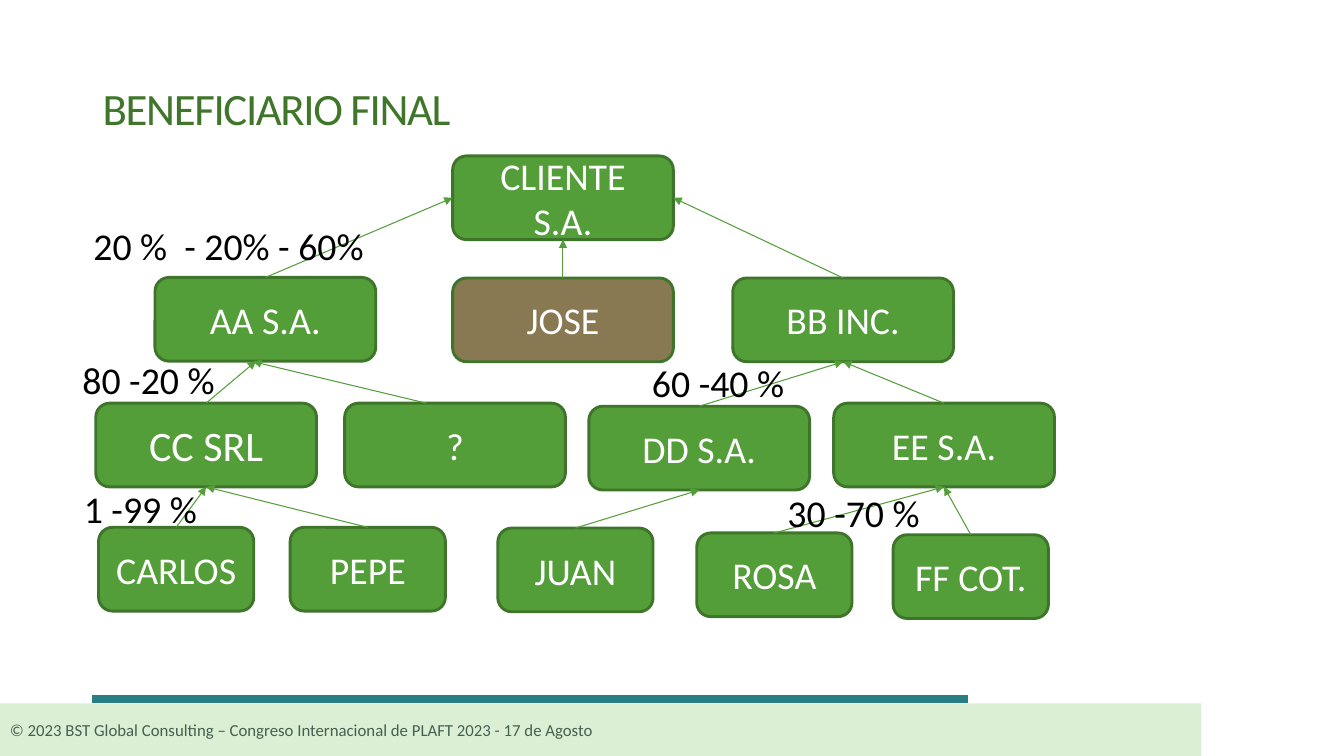
from lxml.etree import SubElement
from pptx import Presentation
from pptx.dml.color import RGBColor
from pptx.enum.shapes import MSO_CONNECTOR as Connector, MSO_SHAPE as Shape
from pptx.enum.text import MSO_ANCHOR as Anchor, PP_ALIGN as Align
from pptx.oxml.ns import qn
from pptx.util import Pt

GREEN = RGBColor(0x54, 0x9E, 0x39)
DARK_GREEN = RGBColor(0x3E, 0x75, 0x2A)
TITLE_GREEN = RGBColor(0x3F, 0x76, 0x2A)
PALE_GREEN = RGBColor(0xDB, 0xEF, 0xD4)
BROWN = RGBColor(0x88, 0x79, 0x52)
TEAL = RGBColor(0x28, 0x7E, 0x83)
SLATE = RGBColor(0x45, 0x5F, 0x51)
WHITE = RGBColor(0xFF, 0xFF, 0xFF)
BLACK = RGBColor(0, 0, 0)

TITLE = "BENEFICIARIO FINAL"
FOOTER = "© 2023 BST Global Consulting – Congreso Internacional de PLAFT 2023 - 17 de Agosto"

COMPANY_WIDTH, PERSON_WIDTH, BOX_HEIGHT = 157.7, 110.9, 59.8
TEXT_SIZE = 27
LARGE_TEXT = {"CC SRL": 30}
BOX_FILLS = {"JOSE": BROWN}
COMPANIES = [
    ("CLIENTE S.A.", 323.3, 111.4),
    ("JOSE", 323.3, 198.6),
    ("AA S.A.", 110.7, 198.2),
    ("BB INC.", 523.4, 198.6),
    ("?", 246.2, 288),
    ("CC SRL", 68.4, 288),
    ("DD S.A.", 420.6, 290.2),
    ("EE S.A.", 595.5, 288),
]
PEOPLE = [
    ("CARLOS", 70.4, 376.7),
    ("PEPE", 207.3, 376.7),
    ("JUAN", 355.6, 377.2),
    ("ROSA", 497.7, 380.7),
    ("FF COT.", 638, 382),
]

TOP, LEFT, BOTTOM, RIGHT = range(4)
LINKS = [
    ("AA S.A.", "CLIENTE S.A.", LEFT),
    ("BB INC.", "CLIENTE S.A.", RIGHT),
    ("JOSE", "CLIENTE S.A.", BOTTOM),
    ("DD S.A.", "BB INC.", BOTTOM),
    ("EE S.A.", "BB INC.", BOTTOM),
    ("JUAN", "DD S.A.", BOTTOM),
    ("ROSA", "EE S.A.", BOTTOM),
    ("FF COT.", "EE S.A.", BOTTOM),
    ("PEPE", "CC SRL", BOTTOM),
    ("CARLOS", "CC SRL", BOTTOM),
]
OFF_CENTRE_ENDS = {"CC SRL": (147.2, 288, 182.9, 258), "?": (304.6, 288, 180.7, 258.3)}

LABEL_HEIGHT = 40
LABELS = [
    ("80 -20 %", 51.8, 251.3, 109.4),
    ("60 -40 %", 458.6, 253.6, 109.4),
    ("1 -99 %", 52.8, 343.4, 95.8),
    ("30 -70 %", 555.4, 346.4, 109.4),
    ("20 %  - 20% - 60%", 59.6, 155.4, 209.5),
]


def write(shape, text, size, colour, align=Align.LEFT, anchor=Anchor.MIDDLE, wrap=True):
    frame = shape.text_frame
    frame.word_wrap = wrap
    frame.vertical_anchor = anchor
    para = frame.paragraphs[0]
    para.alignment = align
    span = para.add_run()
    span.text = text
    span.font.name = "Calibri"
    span.font.size = Pt(size)
    span.font.color.rgb = colour
    return span


def add_box(page, kind, left, top, width, height, fill):
    box = page.shapes.add_shape(kind, Pt(left), Pt(top), Pt(width), Pt(height))
    box.shadow.inherit = False
    box.fill.solid()
    box.fill.fore_color.rgb = fill
    box.line.fill.background()
    return box


def add_node(page, name, left, top, width):
    box = add_box(page, Shape.ROUNDED_RECTANGLE, left, top, width, BOX_HEIGHT,
                  BOX_FILLS.get(name, GREEN))
    box.line.color.rgb = DARK_GREEN
    box.line.width = Pt(2.08)
    frame = box.text_frame
    frame.margin_left = frame.margin_right = Pt(width * 0.06)
    write(box, name, LARGE_TEXT.get(name, TEXT_SIZE), WHITE, Align.CENTER)
    return box


def add_line(page, ends, colour, width):
    line = page.shapes.add_connector(Connector.STRAIGHT, *map(Pt, ends))
    line.line.color.rgb = colour
    line.line.width = Pt(width)
    SubElement(line._element.spPr, qn("a:effectLst"))
    return line


def add_arrow(page, ends=(0, 0, 0, 0)):
    arrow = add_line(page, ends, GREEN, 0.75)
    SubElement(arrow.line._get_or_add_ln(), qn("a:tailEnd"), type="triangle")
    return arrow


def main():
    deck = Presentation()
    deck.slide_width, deck.slide_height = Pt(960), Pt(540)
    page = deck.slides.add_slide(deck.slide_layouts[5])

    footer = add_box(page, Shape.RECTANGLE, 0, 502.4, 858, 37.6, PALE_GREEN)
    write(footer, FOOTER, 12, SLATE)
    add_line(page, (66, 499.5, 691.4, 499.5), TEAL, 6)

    title = page.shapes.title
    title.left, title.top, title.width, title.height = map(Pt, (66.2, 36, 828, 82))
    span = write(title, TITLE, 32, TITLE_GREEN)
    span._r.get_or_add_rPr().set("spc", "-100")

    nodes = {}
    for group, width in ((COMPANIES, COMPANY_WIDTH), (PEOPLE, PERSON_WIDTH)):
        for name, left, top in group:
            nodes[name] = add_node(page, name, left, top, width)

    for owner, owned, side in LINKS:
        arrow = add_arrow(page)
        arrow.begin_connect(nodes[owner], TOP)
        arrow.end_connect(nodes[owned], side)
    for ends in OFF_CENTRE_ENDS.values():
        add_arrow(page, ends)

    for text, left, top, width in LABELS:
        label = page.shapes.add_textbox(Pt(left), Pt(top), Pt(width), Pt(LABEL_HEIGHT))
        write(label, text, TEXT_SIZE, BLACK, anchor=Anchor.TOP, wrap=False)

    deck.save("out.pptx")


if __name__ == "__main__":
    main()
